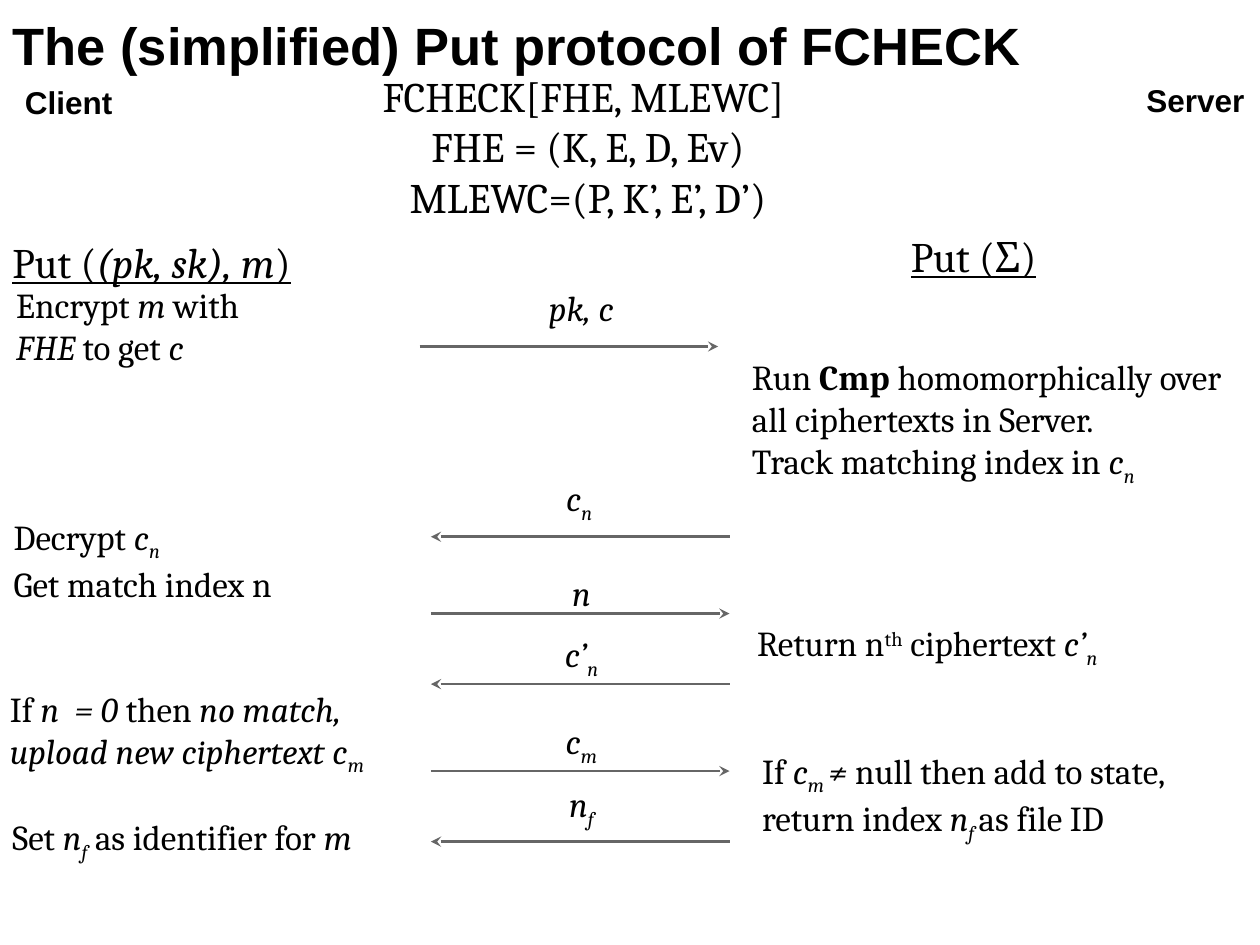
from lxml import etree
from pptx import Presentation
from pptx import util as u
from pptx.dml.color import RGBColor
from pptx.enum import shapes, text
from pptx.oxml import ns

COLORS = {"ink": "000000", "arrow": "666666", "paper": "FFFFFF"}
HEADING, BODY = "Arial", "Cambria"
BASELINES = {"sub": "-25000", "sup": "30000"}
TOP, MIDDLE = text.MSO_ANCHOR.TOP, text.MSO_ANCHOR.MIDDLE
LEFT, CENTER = text.PP_ALIGN.LEFT, text.PP_ALIGN.CENTER


def write(frame, paragraphs, size, font=BODY, anchor=MIDDLE, align=LEFT):
    frame.word_wrap = True
    frame.auto_size = text.MSO_AUTO_SIZE.NONE
    frame.vertical_anchor = anchor
    frame.margin_left = frame.margin_right = u.Inches(0.1)
    frame.margin_top = frame.margin_bottom = u.Inches(0.1)
    for index, pieces in enumerate(paragraphs):
        paragraph = frame.add_paragraph() if index else frame.paragraphs[0]
        paragraph.alignment = align
        for words, style in pieces:
            marks = style.split()
            run = paragraph.add_run()
            run.text = words
            run.font.name = font
            run.font.size = u.Pt(size)
            run.font.color.rgb = RGBColor.from_string(COLORS["ink"])
            run.font.bold = "b" in marks
            run.font.italic = "i" in marks
            run.font.underline = "u" in marks
            for mark in BASELINES.keys() & marks:
                run.font._element.set("baseline", BASELINES[mark])


def add_text(slide, origin, box, paragraphs, size=20, **options):
    left, top, width, height = box
    area = slide.shapes.add_textbox(
        u.Inches(origin[0] + left), u.Inches(origin[1] + top),
        u.Inches(width), u.Inches(height))
    write(area.text_frame, paragraphs, size, **options)


def add_arrow(slide, left, y, width, to_server):
    arrow = slide.shapes.add_connector(
        shapes.MSO_CONNECTOR.STRAIGHT, u.Inches(left), u.Inches(y),
        u.Inches(left + width), u.Inches(y))
    arrow.line.color.rgb = RGBColor.from_string(COLORS["arrow"])
    arrow.line.width = u.Pt(1.5)
    end = "a:tailEnd" if to_server else "a:headEnd"
    etree.SubElement(arrow.line._get_or_add_ln(), ns.qn(end), type="stealth")
    etree.SubElement(arrow._element.spPr, ns.qn("a:effectLst"))


def add_header(slide, box):
    left, top, width, height = box
    title = slide.shapes.title
    title.left, title.top = u.Inches(left), u.Inches(top)
    title.width, title.height = u.Inches(width), u.Inches(height)
    write(title.text_frame, [[("The (simplified) Put protocol of FCHECK", "b")]],
          30, font=HEADING, anchor=TOP)
    scheme = ["FCHECK[FHE, MLEWC] ", "FHE = (K, E, D, Ev)", "MLEWC=(P, K’, E’, D’)"]
    add_text(slide, (left, top), (0.12, 0.33, 9.09, 1.66),
             [[(line, "")] for line in scheme], 24, align=CENTER)


def add_party(slide, origin, name, name_box, call, call_box, steps):
    add_text(slide, origin, name_box, [[(name, "b")]], 18, font=HEADING, anchor=TOP)
    add_text(slide, origin, call_box, [call], 24, anchor=TOP)
    for box, paragraphs in steps:
        add_text(slide, origin, box, paragraphs)


def add_client(slide, origin):
    call = [("Put (", "u"), ("(pk, sk), m", "i u"), (")", "u")]
    steps = [
        ((0.03, 2.22, 2.49, 0.73),
         [[("Encrypt", ""), (" m ", "i"), ("with", ""), (" FHE ", "i"),
           ("to get", ""), (" c", "i")]]),
        ((0.01, 4.08, 3.91, 0.73),
         [[("Decrypt ", ""), ("c", "i"), ("n", "i sub")],
          [("Get match index n", "")]]),
        ((-0.02, 4.78, 3.91, 2.06),
         [[("If ", ""), ("n  = 0 ", "i"), ("then", ""), (" no match,", "i")],
          [("upload new ciphertext c", "i"), ("m", "i sub")]]),
        ((0, 6.4, 3.39, 0.53),
         [[("Set ", ""), ("n", "i"), ("f", "i sub"),
           (" as identifier for ", ""), ("m", "i")]]),
    ]
    add_party(slide, origin, "Client", (0.1, 0.56, 1.1, 0.3),
              call, (0, 1.78, 4.37, 0.6), steps)


def add_server(slide, origin):
    steps = [
        ((0, 1.88, 4.13, 2.93),
         [[("Run ", ""), ("Cmp", "b"),
           (" homomorphically over all ciphertexts in Server.", "")],
          [("Track matching index in ", ""), ("c", "i"), ("n", "i sub")]]),
        ((0.04, 4.86, 3.39, 0.53),
         [[("Return n", ""), ("th", "sup"), (" ciphertext ", ""),
           ("c’", "i"), ("n", "i sub")]]),
        ((0.08, 5.79, 3.6, 1.07),
         [[("If ", ""), ("c", "i"), ("m ", "i sub"), ("≠ ", "i"),
           ("null then add to state, return index ", ""),
           ("n", "i"), ("f ", "i sub"), ("as file ID", "")]]),
    ]
    add_party(slide, origin, "Server", (3.13, 0.54, 1.55, 0.3),
              [("Put (Σ)", "u")], (1.26, 1.73, 2.81, 0.6), steps)


def add_exchange(slide, box):
    left, top, width = box
    messages = [
        ("pk, c", "", -0.09, 0, -0.31),
        ("c", "n ", 0, 1.51, -0.29),
        ("n", "", 0, 2.12, -0.17),
        ("c’", "n", 0, 2.68, -0.22),
        ("c", "m", 0, 3.37, -0.22),
        ("n", "f", 0, 3.93, -0.28),
    ]
    label_width, label_height = 1.63, 0.7
    for index, (symbol, subscript, shift, drop, rise) in enumerate(messages):
        y = top + drop
        pieces = [(symbol, "i")] + ([(subscript, "i sub")] if subscript else [])
        add_text(slide, (left, y),
                 (0.38, rise - label_height / 2, label_width, label_height),
                 [pieces], align=CENTER)
        add_arrow(slide, left + shift, y, width, to_server=index % 2 == 0)


def main():
    deck = Presentation()
    deck.slide_width, deck.slide_height = u.Inches(10), u.Inches(7.5)
    slide = deck.slides.add_slide(deck.slide_layouts[5])
    slide.background.fill.solid()
    slide.background.fill.fore_color.rgb = RGBColor.from_string(COLORS["paper"])
    add_header(slide, (0, 0, 9, 1.25))
    add_client(slide, (0, 0))
    add_server(slide, (5.87, 0))
    add_exchange(slide, (3.42, 2.75, 2.37))
    deck.save("out.pptx")


if __name__ == "__main__":
    main()
